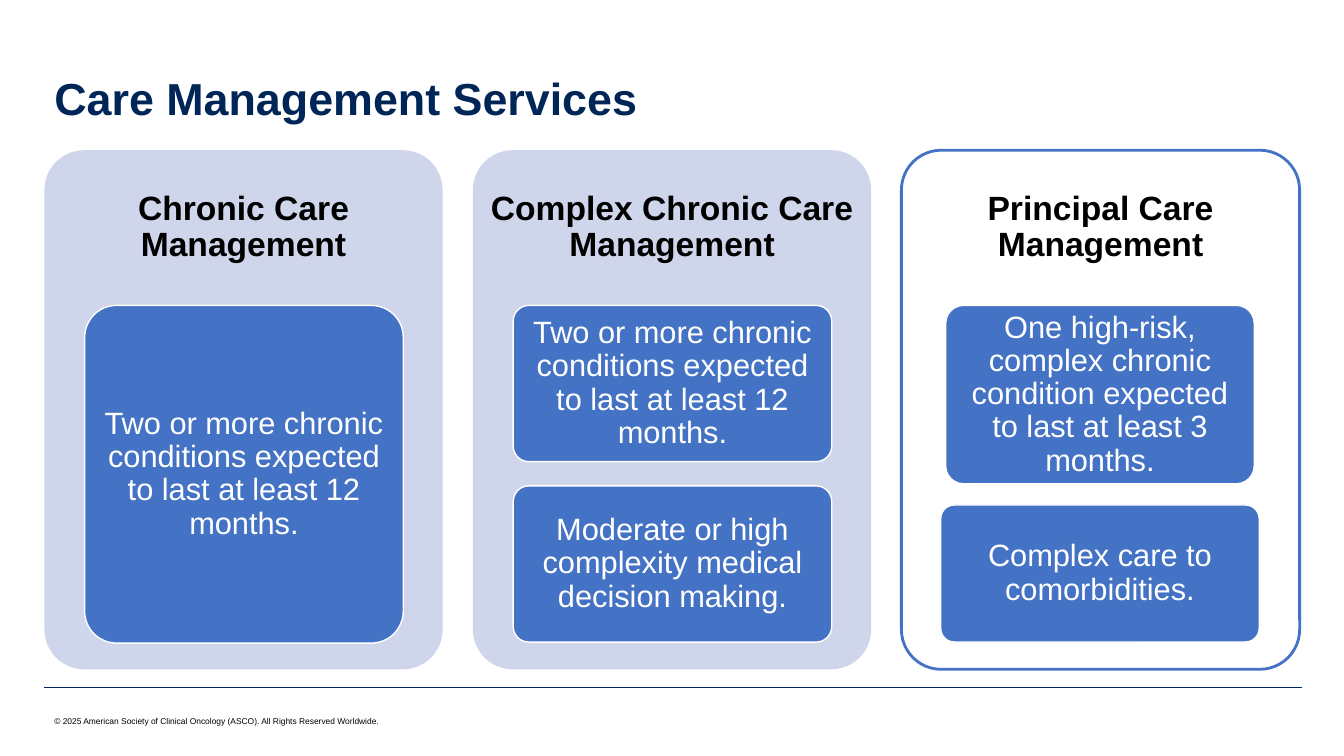
from pptx import Presentation
from pptx import util as u
from pptx.dml.color import RGBColor
from pptx.enum import shapes, text
from pptx.oxml.ns import qn
from lxml import etree

COLORS = {"navy": "002557", "pale": "CFD5EA", "blue": "4472C4",
          "white": "FFFFFF", "black": "000000"}
WIDE, TALL = 395, 515
LEFT, TOP, STEP = 44, 149, 425
HEAD = 154

PANELS = [
    ("Chronic Care Management", "pale", None, [
        (40, 303, 316, 335,
         "Two or more chronic conditions expected to last at least 12 months."),
    ]),
    ("Complex Chronic Care Management", "pale", None, [
        (40, 303, 316, 155,
         "Two or more chronic conditions expected to last at least 12 months."),
        (40, 482, 316, 155,
         "Moderate or high complexity medical decision making."),
    ]),
    ("Principal Care Management", "white", "blue", [
        (44, 303, 306, 177,
         "One high-risk, complex chronic condition expected to last at least 3 months."),
        (39, 501, 316, 136, "Complex care to comorbidities."),
    ]),
]


class Canvas:
    scale = 9144
    font = "Arial"

    def __init__(self, deck):
        self.slide = deck.slides.add_slide(deck.slide_layouts[6])

    def px(self, *sizes):
        return [u.Emu(size * self.scale) for size in sizes]

    def color(self, name):
        return RGBColor.from_string(COLORS[name])

    def fill_text(self, shape, words, size, color, bold=False, center=True,
                  anchor=text.MSO_ANCHOR.MIDDLE, pad=(10, 10), wrap=True, space=0.9):
        frame = shape.text_frame
        frame.word_wrap = wrap
        frame.vertical_anchor = anchor
        frame.margin_left = frame.margin_right = self.px(pad[0])[0]
        frame.margin_top = frame.margin_bottom = self.px(pad[1])[0]
        para = frame.paragraphs[0]
        para.text = words
        para.alignment = text.PP_ALIGN.CENTER if center else text.PP_ALIGN.LEFT
        para.line_spacing = space
        font = para.font
        font.name, font.size, font.bold = self.font, u.Pt(size), bold
        font.color.rgb = self.color(color)

    def label(self, box, words, size, color, **style):
        shape = self.slide.shapes.add_textbox(*self.px(*box))
        self.fill_text(shape, words, size, color, **style)

    def block(self, box, fill, line=None, width=1):
        shape = self.slide.shapes.add_shape(
            shapes.MSO_SHAPE.ROUNDED_RECTANGLE, *self.px(*box))
        shape.adjustments[0] = 0.1
        shape.shadow.inherit = False
        shape.fill.solid()
        shape.fill.fore_color.rgb = self.color(fill)
        if line:
            shape.line.color.rgb = self.color(line)
            shape.line.width = u.Pt(width)
        else:
            shape.line.fill.background()
        return shape

    def rule(self, ends, color, width):
        line = self.slide.shapes.add_connector(
            shapes.MSO_CONNECTOR.STRAIGHT, *self.px(*ends))
        line.line.color.rgb = self.color(color)
        line.line.width = u.Pt(width)
        etree.SubElement(line._element.spPr, qn("a:effectLst"))

    def panel(self, left, title, fill, line, cards):
        self.block((left, TOP, WIDE, TALL), fill, line, 2)
        self.label((left, TOP, WIDE, HEAD), title, 24, "black", bold=True)
        for shift, top, width, height, words in cards:
            card = self.block((left + shift, top, width, height), "blue", "white")
            self.fill_text(card, words, 22, "white", pad=(6, 5))


def main():
    deck = Presentation()
    deck.slide_width, deck.slide_height = u.Inches(13.33), u.Inches(7.5)
    page = Canvas(deck)
    page.rule((44, 682, 1291, 682), "navy", 0.25)
    page.label((44, 706, 350, 20),
               "© 2025 American Society of Clinical Oncology (ASCO). All Rights Reserved Worldwide.",
               6, "black", center=False, anchor=text.MSO_ANCHOR.TOP,
               pad=(10, 5), wrap=False, space=1.0)
    page.label((44, 24, 1245, 105), "Care Management Services", 32, "navy",
               bold=True, center=False, anchor=text.MSO_ANCHOR.BOTTOM, pad=(10, 5))
    for index, panel in enumerate(PANELS):
        page.panel(LEFT + index * STEP, *panel)
    deck.save("out.pptx")


if __name__ == "__main__":
    main()
